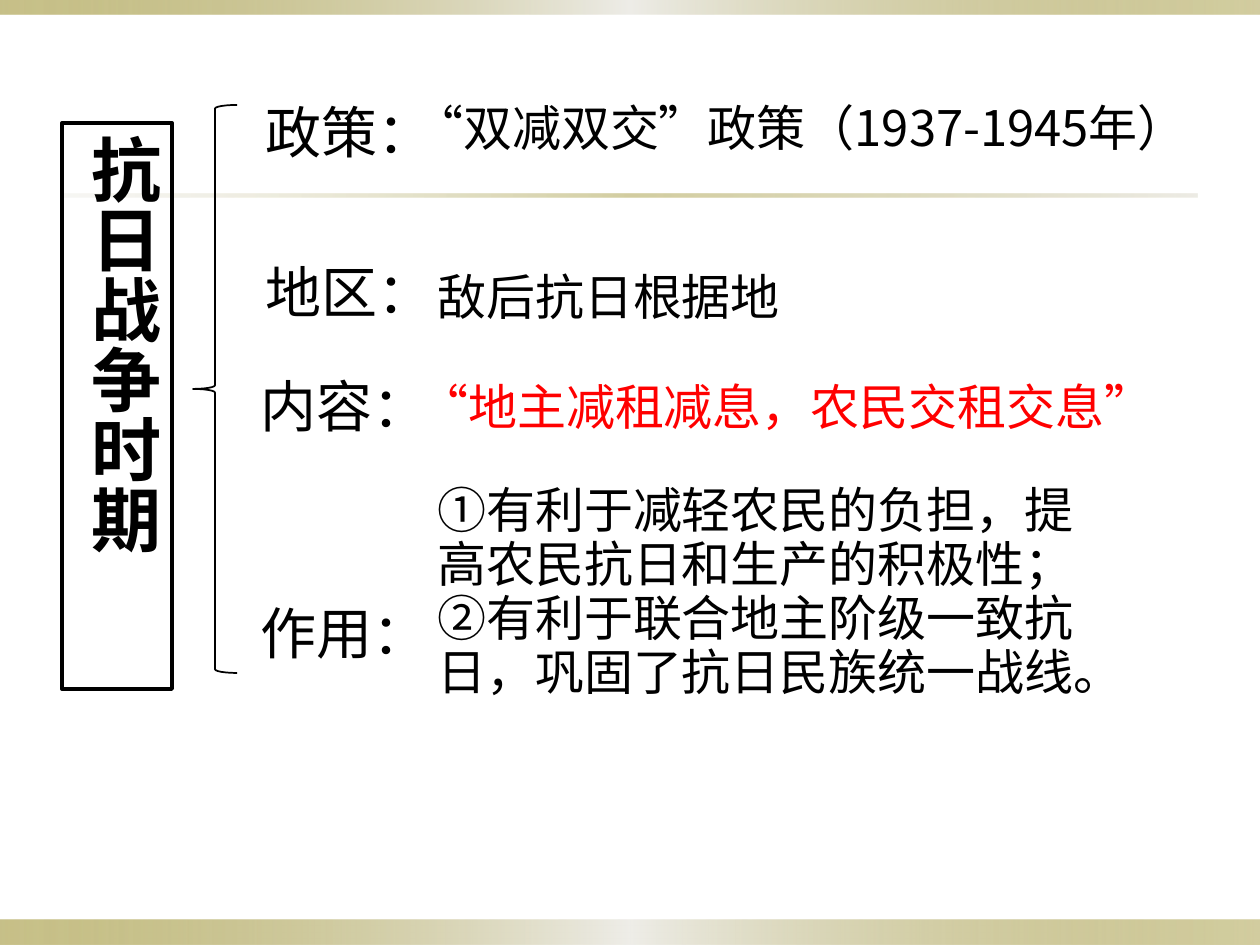
from lxml.etree import SubElement
from pptx import Presentation
from pptx.dml.color import RGBColor
from pptx.enum.shapes import MSO_SHAPE
from pptx.enum.text import MSO_AUTO_SIZE, PP_ALIGN
from pptx.oxml.ns import qn
from pptx.util import Inches, Pt

PX = Inches(1) / 126
COLORS = {"ink": "000000", "accent": "FF0000", "olive": "918415", "mist": "EEEDE8", "sand": "DCD9CC"}
CJK = "Noto Sans CJK SC"

deck = Presentation()
deck.slide_width, deck.slide_height = Inches(10), Inches(7.5)
page = deck.slides.add_slide(deck.slide_layouts[6])


def add_outline(kind, bounds, line_width=None):
    shape = page.shapes.add_shape(kind, *(round(v * PX) for v in bounds))
    shape.shadow.inherit = False
    shape.fill.background()
    if line_width:
        shape.line.color.rgb = RGBColor.from_string(COLORS["ink"])
        shape.line.width = Pt(line_width)
    else:
        shape.line.fill.background()
    return shape


def write(box, lines, size, font, color="ink", wrap=True):
    frame = box.text_frame
    frame.text = "\n".join(lines)
    frame.word_wrap = wrap
    frame.auto_size = MSO_AUTO_SIZE.SHAPE_TO_FIT_TEXT
    for para in frame.paragraphs:
        para.font.size = Pt(size)
        para.font.name = font
        para.font.color.rgb = RGBColor.from_string(COLORS[color])
        SubElement(para.font._element, qn("a:ea"), typeface=CJK)
    return frame


# Gradient bands: stops are (position %, colour, opacity %)
edge_stops = [(0, "olive", 50), (50, "mist", 100), (100, "olive", 40)]
rule_stops = [(0, "sand", 20), (50, "olive", 40), (100, "sand", 50)]
for bounds, stops in [
    ((0, 920, 1260, 25), edge_stops),
    ((0, 0, 1260, 15), edge_stops),
    ((63, 194, 1134, 3), rule_stops),
]:
    band = add_outline(MSO_SHAPE.RECTANGLE, bounds)
    band.fill.gradient()
    band.fill.gradient_angle = 0
    stop_list = band._element.spPr.find(qn("a:gradFill")).find(qn("a:gsLst"))
    for old_stop in list(stop_list):
        stop_list.remove(old_stop)
    for position, color, opacity in stops:
        stop = SubElement(stop_list, qn("a:gs"), pos=str(position * 1000))
        rgb = SubElement(stop, qn("a:srgbClr"), val=COLORS[color])
        SubElement(rgb, qn("a:alpha"), val=str(opacity * 1000))

# Vertical period title and its brace
period = add_outline(MSO_SHAPE.RECTANGLE, (62, 123, 110, 566), 2.25)
frame = write(period, ["抗日战争时期"], 40, "Arial")
frame._txBody.bodyPr.set("vert", "eaVert")
frame.vertical_anchor = None
frame._txBody.bodyPr.set("anchor", "t")
frame.paragraphs[0].alignment = PP_ALIGN.CENTER
frame.paragraphs[0].font.bold = True
add_outline(MSO_SHAPE.LEFT_BRACE, (193, 105, 44, 568), 1)

# Topic labels
for label, left, top, width, wrap in [
    ("政策：", 253, 91, 218, True),
    ("地区：", 253, 251, 218, True),
    ("内容：", 248, 365, 195, False),
    ("作用：", 248, 592, 195, False),
]:
    box = page.shapes.add_textbox(*(round(v * PX) for v in (left, top, width, 81)))
    write(box, [label], 32, "Arial", wrap=wrap)

# Topic details
effects = ["①有利于减轻农民的负担，提高农民抗日和生产的积极性；",
           "②有利于联合地主阶级一致抗日，巩固了抗日民族统一战线。"]
for lines, bounds, color, spacing in [
    (["“双减双交”政策（1937-1945年）"], (402, 91, 806, 72), "ink", None),
    (["敌后抗日根据地"], (425, 260, 684, 72), "ink", None),
    (["“地主减租减息，农民交租交息”"], (407, 370, 766, 72), "accent", None),
    (effects, (425, 478, 707, 229), "ink", Pt(30.8)),
]:
    box = page.shapes.add_textbox(*(round(v * PX) for v in bounds))
    for para in write(box, lines, 28, CJK, color).paragraphs:
        para.line_spacing = spacing

deck.save("out.pptx")
